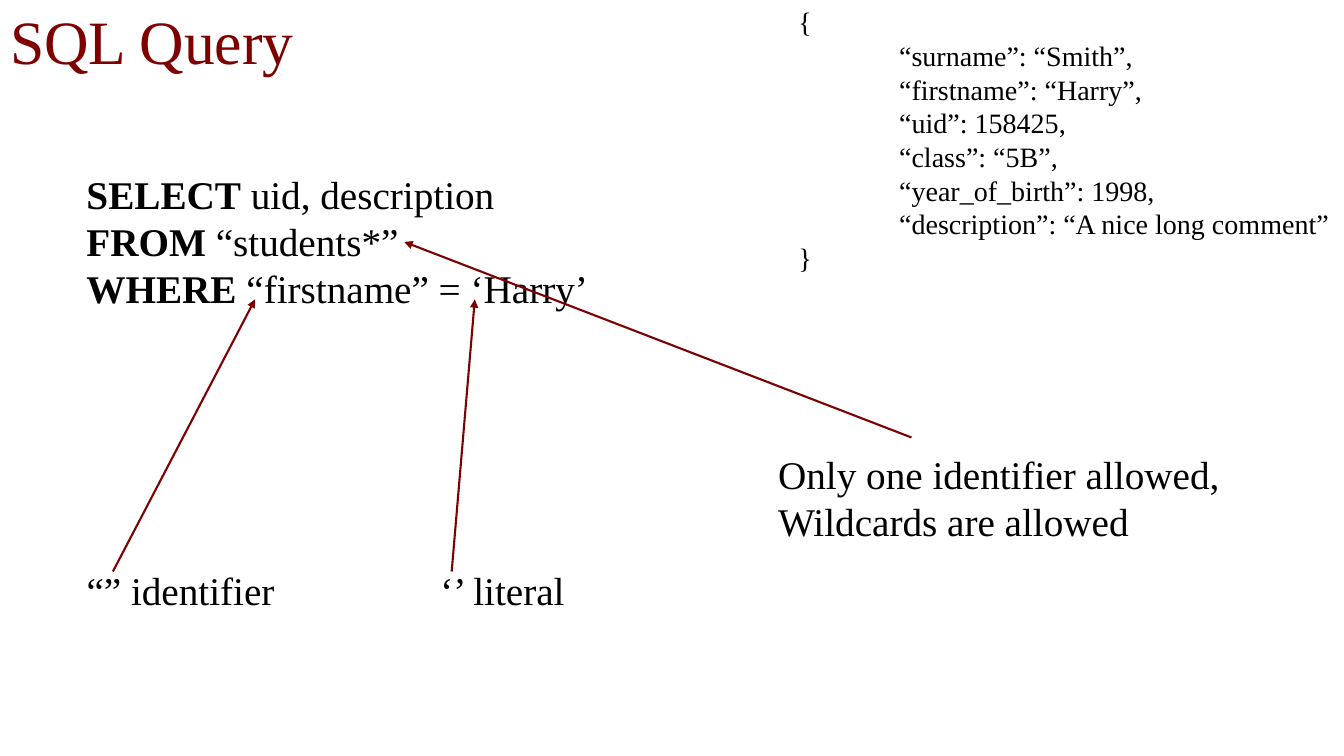
from lxml import etree
from pptx import Presentation
from pptx.dml.color import RGBColor
from pptx.enum.shapes import MSO_CONNECTOR
from pptx.enum.text import MSO_ANCHOR, MSO_AUTO_SIZE, PP_ALIGN
from pptx.oxml.ns import qn
from pptx.util import Inches, Pt

STRAIGHT = MSO_CONNECTOR.STRAIGHT
MIDDLE = MSO_ANCHOR.MIDDLE
NO_FIT, GROW = MSO_AUTO_SIZE.NONE, MSO_AUTO_SIZE.SHAPE_TO_FIT_TEXT
LEFT = PP_ALIGN.LEFT

WIDTH, HEIGHT = Inches(13.33), Inches(7.5)
FONT = "Times New Roman"
BLACK, MAROON = "000000", "7E0000"
TITLE_SIZE, TEXT_SIZE, JSON_SIZE = 44, 28, 20

JSON_FIELDS = [
    "“surname”: “Smith”,",
    "“firstname”: “Harry”,",
    "“uid”: 158425,",
    "“class”: “5B”,",
    "“year_of_birth”: 1998,",
    "“description”: “A nice long comment”",
]
QUERY = [
    ("SELECT", " uid, description"),
    ("FROM", " “students*”"),
    ("WHERE", " “firstname” = ‘Harry’"),
]
# Notes: left, top, width, height in percent of the slide, then the lines
NOTES = [
    (5.7, 74.27, 16.13, 7.6, ["“” identifier"]),
    (32.03, 74.27, 16.13, 7.6, ["‘’ literal"]),
    (57.16, 58.93, 35.11, 13.87,
     ["Only one identifier allowed,", "Wildcards are allowed"]),
]
# Arrows: start and end points in percent of the slide
ARROWS = [
    ((8.4, 75.6), (18.98, 39.6)),
    ((33.61, 75.6), (35.33, 39.6)),
    ((67.82, 57.87), (30.08, 32)),
]


def across(percent):
    return round(WIDTH * percent / 100)


def down(percent):
    return round(HEIGHT * percent / 100)


def color(hex_code):
    return RGBColor.from_string(hex_code)


def style(span, size, hex_code=BLACK, bold=False):
    span.font.name = FONT
    span.font.size = Pt(size)
    span.font.bold = bold
    span.font.color.rgb = color(hex_code)


def add_title(page, text, width, height):
    title = page.shapes.title
    title.left, title.top = 0, 0
    title.width, title.height = across(width), down(height)
    frame = title.text_frame
    frame.text = text
    frame.auto_size = NO_FIT
    frame.vertical_anchor = MIDDLE
    para = frame.paragraphs[0]
    para.alignment = LEFT
    para.line_spacing = 0.9
    style(para.runs[0], TITLE_SIZE, MAROON)


def add_text(page, left, top, width, height, lines, size=TEXT_SIZE):
    box = page.shapes.add_textbox(
        across(left), down(top), across(width), down(height))
    frame = box.text_frame
    frame.word_wrap = True
    frame.text = "\n".join(lines)
    frame.auto_size = GROW
    for para in frame.paragraphs:
        style(para.runs[0], size)
    return frame


def add_json(page):
    frame = add_text(page, 58.66, 0, 42.91, 37.2,
                     ["{", *JSON_FIELDS, "}"], JSON_SIZE)
    for para in frame.paragraphs[1:-1]:
        properties = para._p.get_or_add_pPr()
        properties.set("marL", str(Inches(1)))
        properties.set("indent", "0")


def add_query(page):
    keywords = [keyword for keyword, _ in QUERY]
    frame = add_text(page, 5.7, 21.87, 46.14, 20.13, keywords)
    for para, (_, rest) in zip(frame.paragraphs, QUERY):
        para.runs[0].font.bold = True
        span = para.add_run()
        span.text = rest
        style(span, TEXT_SIZE)


def add_arrow(page, start, end):
    arrow = page.shapes.add_connector(
        STRAIGHT, across(start[0]), down(start[1]), across(end[0]), down(end[1]))
    arrow.line.color.rgb = color(MAROON)
    arrow.line.width = Pt(1.5)
    etree.SubElement(arrow.line._get_or_add_ln(), qn("a:tailEnd"), type="triangle")
    etree.SubElement(arrow._element.spPr, qn("a:effectLst"))


def main():
    deck = Presentation()
    deck.slide_width, deck.slide_height = WIDTH, HEIGHT
    page = deck.slides.add_slide(deck.slide_layouts[5])

    # Title, sample document and query
    add_title(page, "SQL Query", 25.06, 11.87)
    add_json(page)
    add_query(page)

    # Explanations with arrows into the query
    for note in NOTES:
        add_text(page, *note)
    for start, end in ARROWS:
        add_arrow(page, start, end)

    deck.save("out.pptx")


if __name__ == "__main__":
    main()
